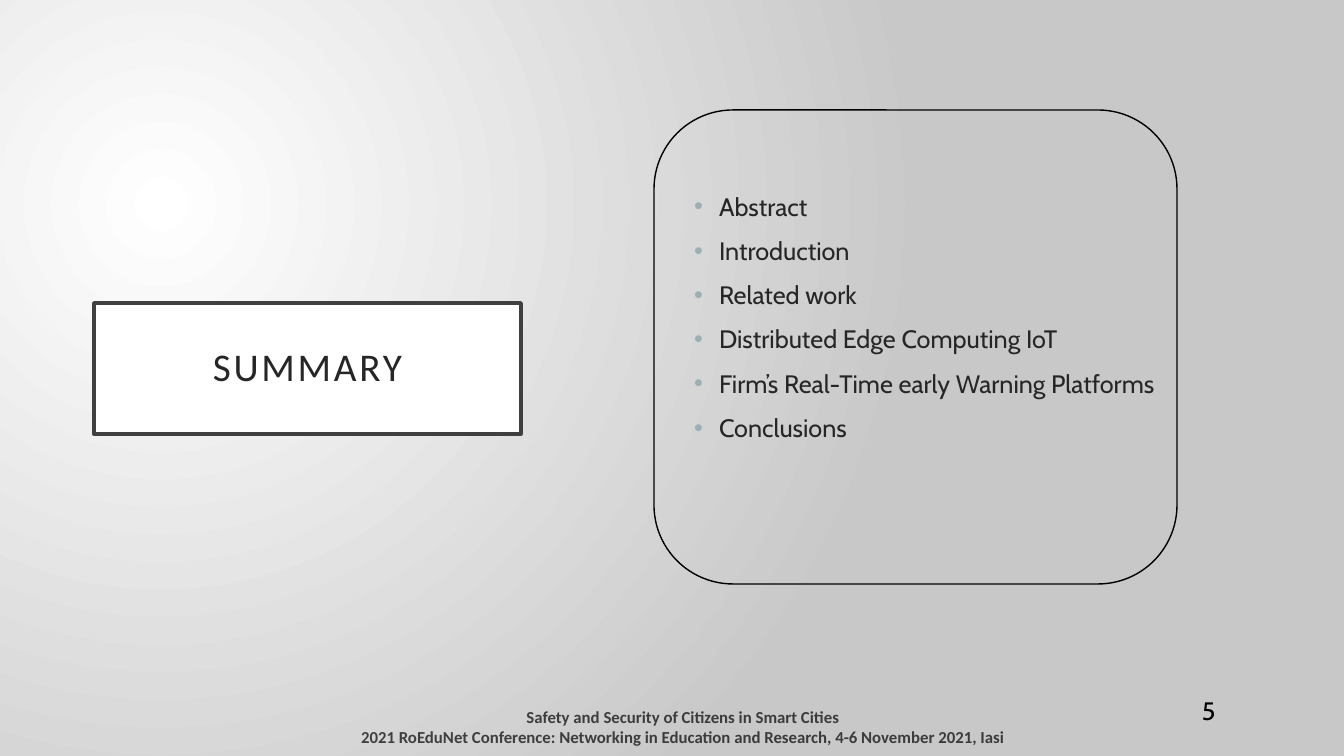
from typing import NamedTuple

from lxml.etree import SubElement
from pptx import Presentation
from pptx.dml.color import RGBColor
from pptx.enum.shapes import MSO_SHAPE
from pptx.enum.text import MSO_ANCHOR, MSO_AUTO_SIZE, PP_ALIGN
from pptx.oxml.ns import qn
from pptx.util import Emu, Pt

PAGE_WIDTH, PAGE_HEIGHT = 1344, 756
EMU_PER_PX = 12192000 / PAGE_WIDTH

COLORS = {
    "white": "FFFFFF",
    "backdrop": "C8C8C8",
    "title_border": "404040",
    "text": "262626",
    "bullet": "9BAFB5",
    "black": "000000",
}

TOPICS = [
    "Abstract",
    "Introduction",
    "Related work",
    "Distributed Edge Computing IoT",
    "Firm’s Real-Time early Warning Platforms",
    "Conclusions",
]
FOOTER_LINES = [
    "Safety and Security of Citizens in Smart Cities",
    "2021 RoEduNet Conference: Networking in Education and Research, 4-6 November 2021, Iasi",
]


class Box(NamedTuple):
    left: int
    top: int
    width: int
    height: int

    def emu(self) -> list[Emu]:
        return [px(value) for value in self]


class Insets(NamedTuple):
    left: int = 10
    top: int = 5
    right: int = 10
    bottom: int = 5


TITLE_BOX = Box(94, 303, 427, 131)
TOPICS_BOX = Box(684, 141, 480, 444)
NUMBER_BOX = Box(1186, 685, 40, 40)
FRAME_BOX = Box(654, 110, 523, 474)
FOOTER_BOX = Box(253, 706, 860, 42)


def px(value: int) -> Emu:
    return Emu(round(value * EMU_PER_PX))


def color(name: str) -> RGBColor:
    return RGBColor.from_string(COLORS[name])


def add_bullet(para, indent: int) -> None:
    properties = para._p.get_or_add_pPr()
    properties.set("marL", str(px(indent)))
    properties.set("indent", str(-px(indent)))
    bullet_color = SubElement(properties, qn("a:buClr"))
    SubElement(bullet_color, qn("a:srgbClr"), val=COLORS["bullet"])
    SubElement(properties, qn("a:buFont"), typeface="Arial")
    SubElement(properties, qn("a:buChar"), char="•")


def write_text(shape, lines: list[str], *, font: str, size: int, ink: str,
               insets: Insets = Insets(), align=PP_ALIGN.LEFT,
               anchor=MSO_ANCHOR.TOP, bold: bool = False, gap: int = 0,
               line_spacing: float = 1.0, bulleted: bool = False,
               tracking: int = 0, opacity: int = 100) -> None:
    frame = shape.text_frame
    frame.word_wrap = True
    frame.auto_size = MSO_AUTO_SIZE.NONE
    frame.vertical_anchor = anchor
    frame.margin_left, frame.margin_top, frame.margin_right, frame.margin_bottom = map(px, insets)
    for index, line in enumerate(lines):
        para = frame.add_paragraph() if index else frame.paragraphs[0]
        if bulleted:
            add_bullet(para, 25)
        para.alignment = align
        para.line_spacing = line_spacing
        para.space_before = Pt(gap if index else 0)
        span = para.add_run()
        span.text = line
        span.font.name = font
        span.font.size = Pt(size)
        span.font.bold = bold
        span.font.color.rgb = color(ink)
        properties = span._r.get_or_add_rPr()
        if tracking:
            properties.set("spc", str(tracking * 100))
        if opacity < 100:
            ink_node = properties.find(".//" + qn("a:srgbClr"))
            SubElement(ink_node, qn("a:alpha"), val=str(opacity * 1000))


def paint_background(page) -> None:
    """Fill the page with a circular gradient centred at the upper left."""
    fill = page.background.fill
    fill.gradient()
    for stop, name, position in zip(fill.gradient_stops, ("white", "backdrop"), (0, 1)):
        stop.color.rgb = color(name)
        stop.position = position
    gradient = page.element.find(".//" + qn("a:gradFill"))
    gradient.remove(gradient.find(qn("a:lin")))
    circle = SubElement(gradient, qn("a:path"), path="circle")
    SubElement(circle, qn("a:fillToRect"), l="50000", t="55000", r="125000", b="100000")


def add_outline(page, kind, box: Box):
    shape = page.shapes.add_shape(kind, *box.emu())
    shape.shadow.inherit = False
    shape.fill.background()
    shape.line.fill.background()
    return shape


def add_title(page) -> None:
    title = page.shapes.title
    title.left, title.top, title.width, title.height = TITLE_BOX.emu()
    title.fill.solid()
    title.fill.fore_color.rgb = color("white")
    title.line.color.rgb = color("title_border")
    title.line.width = Pt(2.5)
    write_text(title, ["SUMMARY"], font="Calibri", size=28, ink="text",
               insets=Insets(20, 20, 20, 20), align=PP_ALIGN.CENTER,
               anchor=MSO_ANCHOR.MIDDLE, line_spacing=0.9, tracking=2)


def main() -> None:
    deck = Presentation()
    deck.slide_width, deck.slide_height = px(PAGE_WIDTH), px(PAGE_HEIGHT)
    page = deck.slides.add_slide(deck.slide_layouts[5])
    paint_background(page)
    add_title(page)

    topics = page.shapes.add_textbox(*TOPICS_BOX.emu())
    write_text(topics, TOPICS, font="Cabin", size=18, ink="text",
               insets=Insets(top=50, right=0), gap=10, bulleted=True)

    number = add_outline(page, MSO_SHAPE.OVAL, NUMBER_BOX)
    write_text(number, ["5"], font="Cabin", size=18, ink="black")

    frame = add_outline(page, MSO_SHAPE.ROUNDED_RECTANGLE, FRAME_BOX)
    frame.line.color.rgb = color("black")
    frame.line.width = Pt(1)

    footer = page.shapes.add_textbox(*FOOTER_BOX.emu())
    write_text(footer, FOOTER_LINES, font="Calibri", size=12, ink="black",
               insets=Insets(0, 0, 0, 0), align=PP_ALIGN.CENTER,
               anchor=MSO_ANCHOR.MIDDLE, bold=True, opacity=70)

    deck.save("out.pptx")


if __name__ == "__main__":
    main()
